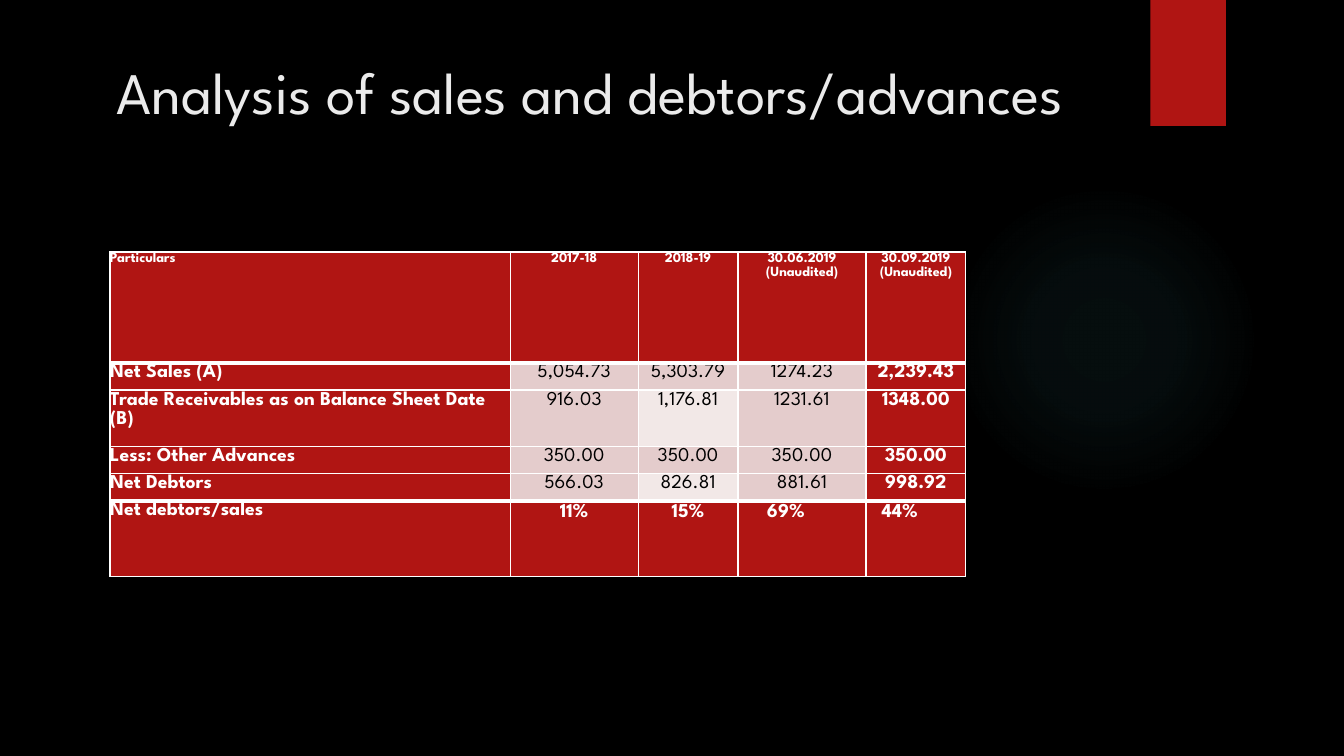
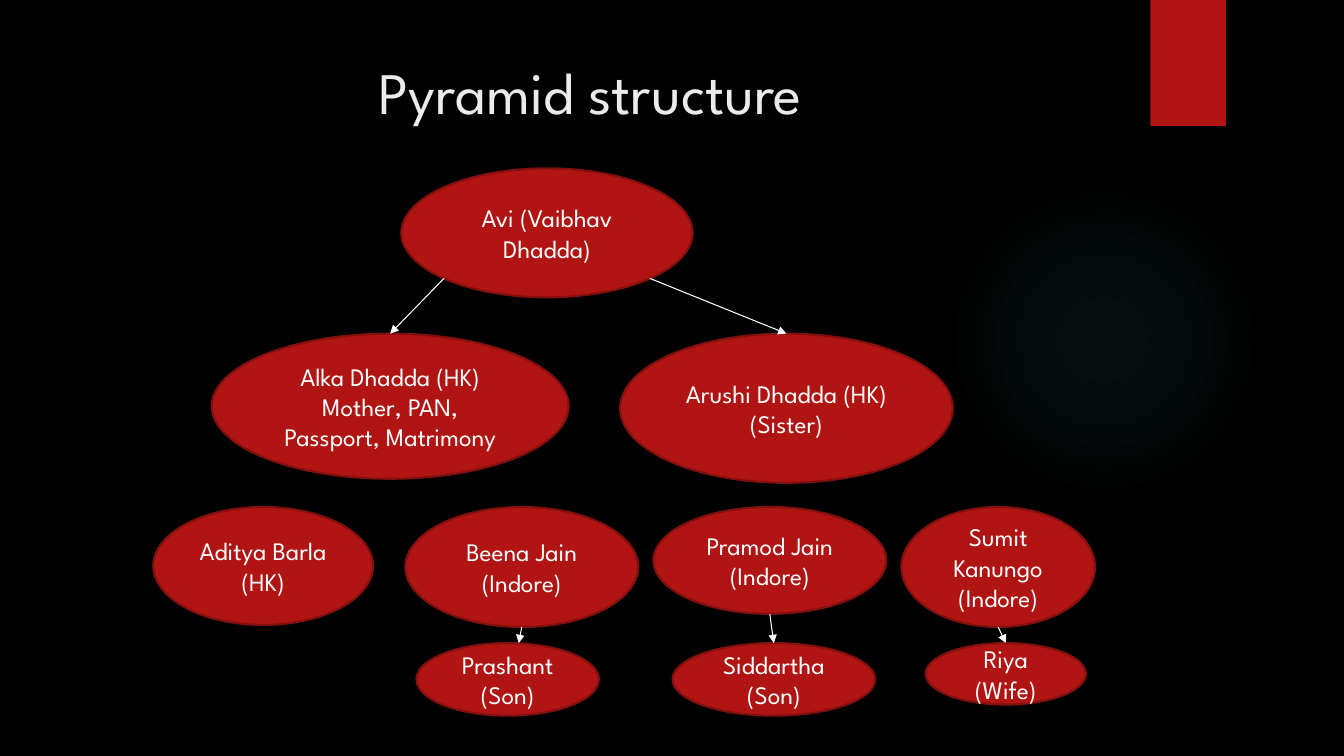
"""Build two slides: a table of sales and debtors, and a pyramid of people."""
from dataclasses import dataclass
from math import cos, pi, sin

from pptx import Presentation
from pptx.dml.color import RGBColor
from pptx.enum.shapes import MSO_CONNECTOR, MSO_SHAPE
from pptx.enum.text import MSO_ANCHOR, MSO_AUTO_SIZE, PP_ALIGN
from pptx.oxml import parse_xml
from pptx.oxml.ns import nsdecls, qn
from pptx.util import Inches, Pt

LEFT, CENTER = PP_ALIGN.LEFT, PP_ALIGN.CENTER
TOP, MIDDLE = MSO_ANCHOR.TOP, MSO_ANCHOR.MIDDLE
OVAL, RECT = MSO_SHAPE.OVAL, MSO_SHAPE.RECTANGLE
STRAIGHT = MSO_CONNECTOR.STRAIGHT
NO_FIT = MSO_AUTO_SIZE.NONE


@dataclass(frozen=True)
class Theme:
    """Colours, font and type sizes of the deck."""
    font: str = "League Spartan"
    back: str = "000000"
    title: str = "EBEBEB"
    light: str = "FFFFFF"
    dark: str = "000000"
    red: str = "B01513"
    edge: str = "82100E"
    glow: str = "50B9C1"
    pink: str = "E4CCCC"
    pale: str = "F2E8E7"
    big: int = 42
    node: int = 18
    cell: int = 14
    head: int = 10


@dataclass(frozen=True)
class Node:
    """A person in the pyramid, as an ellipse in inches."""
    text: str
    x: float
    y: float
    w: float
    h: float

    def edge(self, turn: float) -> tuple[float, float]:
        """Return the rim point at a clockwise turn from the right, in degrees."""
        angle = turn * pi / 180
        return (self.x + self.w / 2 * (1 + cos(angle)),
                self.y + self.h / 2 * (1 + sin(angle)))


@dataclass(frozen=True)
class Link:
    """An arrow from the rim of one node to the top of another."""
    start: str
    end: str
    turn: float = 90
    shift: float = 0


THEME = Theme()
COLS = (3.97, 1.27, 0.99, 1.27, 0.99)
ROWS = (1.1, 0.27, 0.56, 0.27, 0.27, 0.75)
DATA = (
    ("Particulars", "2017-18", "2018-19", "30.06.2019\n(Unaudited)",
     "30.09.2019\n(Unaudited)"),
    ("Net Sales (A)", "5,054.73", "5,303.79", "1274.23", "2,239.43"),
    ("Trade Receivables as on Balance Sheet Date (B)", "916.03", "1,176.81",
     "1231.61", "1348.00"),
    ("Less: Other Advances", "350.00", "350.00", "350.00", "350.00"),
    ("Net Debtors", "566.03", "826.81", "881.61", "998.92"),
    ("Net debtors/sales", "11%", "15%", "69%", "44%"),
)
PALE = {(2, 2), (4, 2)}
INDENT = {(5, 3): 0.32, (5, 4): 0.32}
NODES = {
    "avi": Node("Avi (Vaibhav Dhadda)", 3.98, 1.67, 2.89, 1.28),
    "alka": Node("Alka Dhadda (HK)\nMother, PAN, Passport, Matrimony",
                 2.1, 3.31, 3.54, 1.44),
    "arushi": Node("Arushi Dhadda (HK) (Sister)", 6.15, 3.31, 3.3, 1.48),
    "aditya": Node("Aditya Barla (HK)", 1.52, 5.03, 2.18, 1.17),
    "beena": Node("Beena Jain (Indore)", 4.02, 5.03, 2.31, 1.19),
    "pramod": Node("Pramod Jain (Indore)", 6.48, 5.03, 2.31, 1.06),
    "sumit": Node("Sumit Kanungo (Indore)", 8.94, 5.03, 1.92, 1.19),
    "prashant": Node("Prashant (Son)", 4.13, 6.38, 1.81, 0.72),
    "sid": Node("Siddartha (Son)", 6.67, 6.38, 2.01, 0.72),
    "riya": Node("Riya (Wife)", 9.18, 6.38, 1.59, 0.61),
}
LINKS = (
    Link("avi", "alka", turn=135),
    Link("avi", "arushi", turn=45),
    Link("beena", "prashant", shift=0.11),
    Link("pramod", "sid"),
    Link("sumit", "riya"),
)


def rgb(code: str) -> RGBColor:
    """Turn a hex code into a colour."""
    return RGBColor.from_string(code)


def write(frame, text: str, *, size: int, color: str = THEME.light,
          bold: bool = False, align=CENTER, lead: float | None = None) -> None:
    """Fill a text frame, one paragraph a line, in one format."""
    frame.word_wrap = True
    for i, line in enumerate(text.split("\n")):
        para = frame.add_paragraph() if i else frame.paragraphs[0]
        para.alignment = align
        if lead:
            para.line_spacing = lead
        run = para.add_run()
        run.text = line
        font = run.font
        font.name, font.size, font.bold = THEME.font, Pt(size), bold
        font.color.rgb = rgb(color)


def draw(slide, kind, box: tuple, fill: str, edge: str | None = None):
    """Add a flat preset shape."""
    shape = slide.shapes.add_shape(kind, *map(Inches, box))
    shape.shadow.inherit = False
    shape.fill.solid()
    shape.fill.fore_color.rgb = rgb(fill)
    if edge:
        shape.line.color.rgb = rgb(edge)
        shape.line.width = Pt(1.5)
    else:
        shape.line.fill.background()
    return shape


def fade(shape, color: str) -> None:
    """Swap the fill for a round glow that fades outwards."""
    stops = "".join(
        f'<a:gs pos="{pos * 1000}"><a:srgbClr val="{color}">'
        f'<a:alpha val="{alpha * 1000}"/></a:srgbClr></a:gs>'
        for pos, alpha in ((0, 7), (36, 6), (69, 0), (100, 0)))
    grad = parse_xml(
        f'<a:gradFill {nsdecls("a")}><a:gsLst>{stops}</a:gsLst>'
        '<a:path path="circle"><a:fillToRect l="50000" t="50000" '
        'r="50000" b="50000"/></a:path></a:gradFill>')
    props = shape.element.spPr
    props.replace(props.find(qn("a:solidFill")), grad)


def dress(layout, slide) -> None:
    """Put the glow and the red band on the layout."""
    for spot in list(layout.placeholders)[1:]:
        layout.shapes.element.remove(spot.element)
    glow = draw(slide, OVAL, (9.41, 1.83, 3.08, 3.08), THEME.glow)
    fade(glow, THEME.glow)
    band = draw(slide, RECT, (11.41, 0, 0.75, 1.25), THEME.red)
    for shape in (glow, band):
        layout.shapes.element.append(shape.element)


def head(slide, text: str, height: float) -> None:
    """Place and format the slide title."""
    title = slide.shapes.title
    title.left, title.top = Inches(0.71), Inches(0.5)
    title.width, title.height = Inches(10.29), Inches(height)
    frame = title.text_frame
    frame.auto_size = NO_FIT
    frame.vertical_anchor = TOP
    write(frame, text, size=THEME.big, color=THEME.title)


def rule(cell, row: int) -> None:
    """Draw white cell borders, thick under the header and above the total."""
    last = len(ROWS) - 1
    wide = {"T": row in (1, last), "B": row in (0, last - 1)}
    props = cell._tc.get_or_add_tcPr()
    for side in "LRTB":
        width = Pt(3 if wide.get(side) else 1)
        props.append(parse_xml(
            f'<a:ln{side} {nsdecls("a")} w="{width}"><a:solidFill>'
            f'<a:srgbClr val="{THEME.light}"/></a:solidFill></a:ln{side}>'))


def grid(slide) -> None:
    """Add the table of sales and debtors."""
    frame = slide.shapes.add_table(
        len(ROWS), len(COLS), Inches(1.09), Inches(2.5),
        Inches(sum(COLS)), Inches(sum(ROWS)))
    table = frame.table
    table.horz_banding = False
    for col, width in zip(table.columns, COLS):
        col.width = Inches(width)
    for line, height in zip(table.rows, ROWS):
        line.height = Inches(height)
    for r, line in enumerate(DATA):
        for c, text in enumerate(line):
            cell = table.cell(r, c)
            cell.margin_left = cell.margin_top = cell.margin_bottom = 0
            cell.margin_right = Inches(INDENT.get((r, c), 0))
            rule(cell, r)
            strong = r in (0, len(ROWS) - 1) or c in (0, len(COLS) - 1)
            soft = THEME.pale if (r, c) in PALE else THEME.pink
            cell.fill.solid()
            cell.fill.fore_color.rgb = rgb(THEME.red if strong else soft)
            write(cell.text_frame, text, bold=strong,
                  size=THEME.cell if r else THEME.head,
                  color=THEME.light if strong else THEME.dark,
                  align=CENTER if c else LEFT,
                  lead=1.15 if c and r == len(ROWS) - 1 else 1.07)


def bubble(slide, node: Node) -> None:
    """Add one person to the pyramid."""
    shape = draw(slide, OVAL, (node.x, node.y, node.w, node.h),
                 THEME.red, THEME.edge)
    shape.text_frame.vertical_anchor = MIDDLE
    write(shape.text_frame, node.text, size=THEME.node)


def arrow(slide, link: Link) -> None:
    """Join two people with an arrow."""
    x, y = NODES[link.end].edge(270)
    ends = (*NODES[link.start].edge(link.turn), x + link.shift, y)
    line = slide.shapes.add_connector(STRAIGHT, *map(Inches, ends))
    line.line.color.rgb = rgb(THEME.light)
    line.line.width = Pt(0.75)
    line.get_or_add_ln().append(
        parse_xml(f'<a:tailEnd {nsdecls("a")} type="triangle"/>'))
    line.element.spPr.append(parse_xml(f'<a:effectLst {nsdecls("a")}/>'))


def main() -> None:
    """Build and save the deck."""
    deck = Presentation()
    deck.slide_width, deck.slide_height = Inches(13.33), Inches(7.5)
    back = deck.slide_master.background.fill
    back.solid()
    back.fore_color.rgb = rgb(THEME.back)
    layout = deck.slide_layouts[5]

    sales = deck.slides.add_slide(layout)
    dress(layout, sales)
    head(sales, "Analysis of sales and debtors/advances", 1.53)
    grid(sales)

    tree = deck.slides.add_slide(layout)
    head(tree, "Pyramid structure", 1.17)
    for node in NODES.values():
        bubble(tree, node)
    for link in LINKS:
        arrow(tree, link)
    deck.save("out.pptx")


if __name__ == "__main__":
    main()
